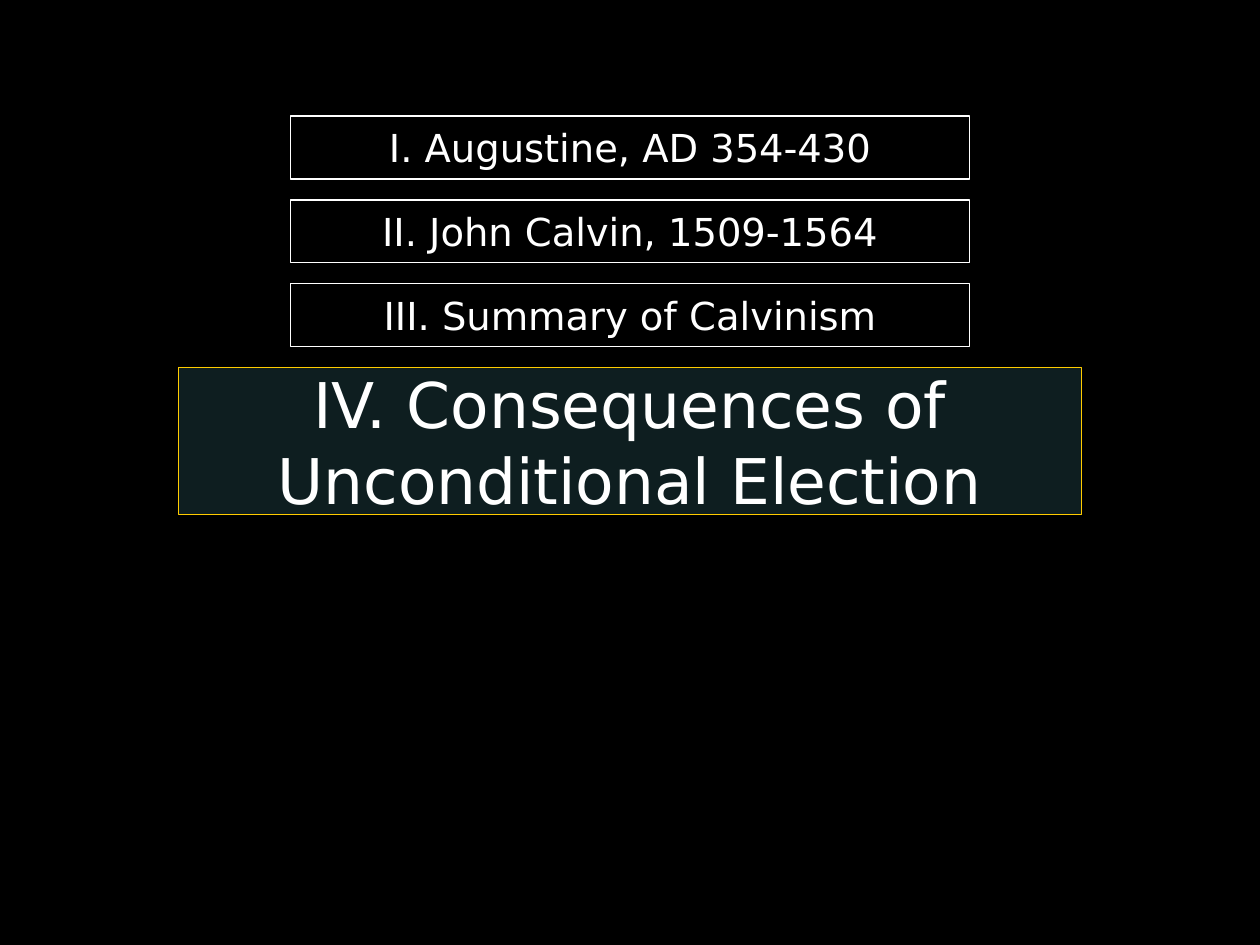
"""Build an outline slide with three plain headings and one highlighted heading."""
from dataclasses import dataclass

from pptx import Presentation
from pptx.dml.color import RGBColor as Color
from pptx.enum.shapes import MSO_SHAPE as Shape
from pptx.enum.text import MSO_ANCHOR as Anchor, MSO_AUTO_SIZE as AutoSize, PP_ALIGN as Align
from pptx.util import Cm, Pt

TITLE = "I. Augustine, AD 354-430"
OTHER_HEADINGS = ["II. John Calvin, 1509-1564", "III. Summary of Calvinism"]
CURRENT_HEADING = "IV. Consequences of Unconditional Election"

SLIDE_WIDTH, SLIDE_HEIGHT = 25.4, 19.05
FIRST_TOP, GAP = 2.34, 0.42


@dataclass(frozen=True)
class BoxStyle:
    width: float
    height: float
    fill: Color
    line: Color
    size: int


class Theme:
    font = "DejaVu Sans"
    background = Color(0, 0, 0)
    text = Color(255, 255, 255)
    line_width = 0.75
    plain = BoxStyle(13.69, 1.27, background, text, 22)
    current = BoxStyle(18.21, 2.97, Color(0x0E, 0x1E, 0x20), Color(0xFF, 0xCC, 0), 36)


def format_box(shape, text, style, top):
    shape.left, shape.top = Cm((SLIDE_WIDTH - style.width) / 2), Cm(top)
    shape.width, shape.height = Cm(style.width), Cm(style.height)
    shape.fill.solid()
    shape.fill.fore_color.rgb = style.fill
    shape.line.color.rgb = style.line
    shape.line.width = Pt(Theme.line_width)
    frame = shape.text_frame
    frame.text = text
    frame.word_wrap = True
    frame.auto_size = AutoSize.NONE
    frame.vertical_anchor = Anchor.MIDDLE
    paragraph = frame.paragraphs[0]
    paragraph.alignment = Align.CENTER
    paragraph.font.name = Theme.font
    paragraph.font.size = Pt(style.size)
    paragraph.font.color.rgb = Theme.text


def add_heading(slide, text, style, top):
    shape = slide.shapes.add_shape(Shape.RECTANGLE, 0, 0, 0, 0)
    shape.shadow.inherit = False
    format_box(shape, text, style, top)


def main():
    presentation = Presentation()
    presentation.slide_width, presentation.slide_height = Cm(SLIDE_WIDTH), Cm(SLIDE_HEIGHT)
    slide = presentation.slides.add_slide(presentation.slide_layouts[5])
    slide.background.fill.solid()
    slide.background.fill.fore_color.rgb = Theme.background

    format_box(slide.shapes.title, TITLE, Theme.plain, FIRST_TOP)
    headings = [(text, Theme.plain) for text in OTHER_HEADINGS] + [(CURRENT_HEADING, Theme.current)]
    for row, (text, style) in enumerate(headings, start=1):
        add_heading(slide, text, style, FIRST_TOP + row * (Theme.plain.height + GAP))
    presentation.save("out.pptx")


if __name__ == "__main__":
    main()
